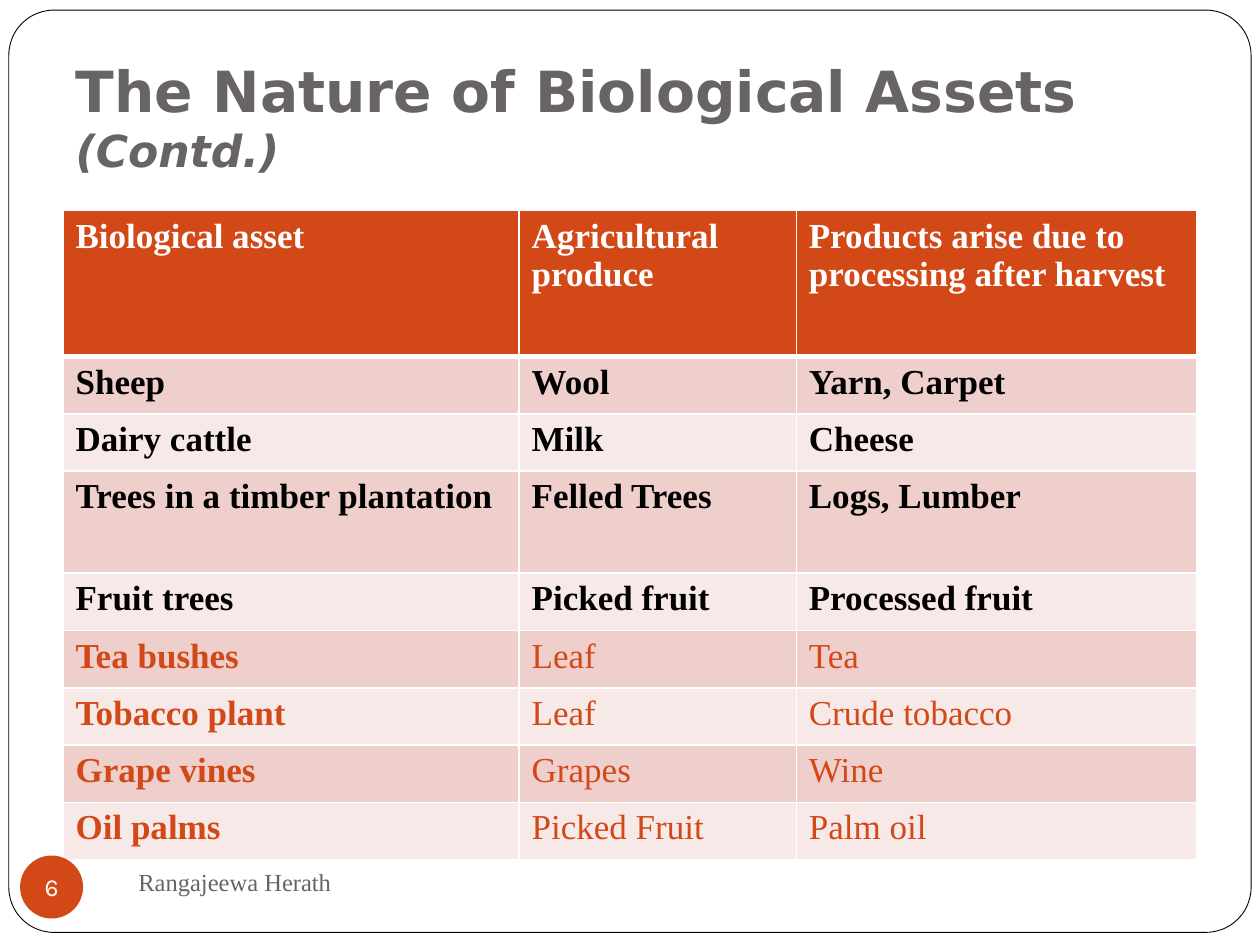
from lxml import etree
from pptx import Presentation
from pptx.dml.color import RGBColor
from pptx.enum import shapes, text
from pptx.oxml import ns
from pptx.util import Inches, Pt

COLORS = {
    "white": "FFFFFF", "black": "000000", "accent": "D34817",
    "gray": "696464", "band_dark": "EFCFCC", "band_light": "F7E9E8",
}
SERIF = "Times New Roman"

ASSETS = [
    ("Biological asset", "Agricultural produce",
     "Products arise due to processing after harvest"),
    ("Sheep", "Wool", "Yarn, Carpet"),
    ("Dairy cattle", "Milk", "Cheese"),
    ("Trees in a timber plantation", "Felled Trees", "Logs, Lumber"),
    ("Fruit trees", "Picked fruit", "Processed fruit"),
    ("Tea bushes", "Leaf", "Tea"),
    ("Tobacco plant", "Leaf", "Crude tobacco"),
    ("Grape vines", "Grapes", "Wine"),
    ("Oil palms", "Picked Fruit", "Palm oil"),
]
FIRST_ACCENT_ROW = 5
COLUMN_WIDTHS = (3.62, 2.2, 3.18)
ROW_HEIGHT = 0.455
TALL_ROWS = {0: 1.16, 3: 0.81}


def color(name):
    return RGBColor.from_string(COLORS[name])


def style(run, size, font, color_name, bold=False, italic=False):
    run.font.size = Pt(size)
    run.font.name = font
    run.font.color.rgb = color(color_name)
    run.font.bold = bold
    run.font.italic = italic


def set_margins(frame, left, top, right, bottom):
    frame.margin_left, frame.margin_top = Inches(left), Inches(top)
    frame.margin_right, frame.margin_bottom = Inches(right), Inches(bottom)


def add_frame(slide):
    frame = slide.shapes.add_shape(
        shapes.MSO_SHAPE.ROUNDED_RECTANGLE,
        Inches(0.07), Inches(0.08), Inches(9.86), Inches(7.32))
    frame.adjustments[0] = 0.049
    frame.shadow.inherit = False
    frame.fill.solid()
    frame.fill.fore_color.rgb = color("white")
    frame.line.color.rgb = color("black")
    frame.line.width = Pt(0.5)
    # Send behind the title placeholder
    slide.shapes.element.insert(2, frame.element)


def fill_title(slide):
    title = slide.shapes.title
    title.left, title.top = Inches(0.5), Inches(0.42)
    title.width, title.height = Inches(8.92), Inches(1.08)
    frame = title.text_frame
    frame.word_wrap = True
    frame.auto_size = text.MSO_AUTO_SIZE.NONE
    frame.vertical_anchor = text.MSO_ANCHOR.BOTTOM
    set_margins(frame, 0.1, 0.05, 0.1, 0.1)
    heading = frame.paragraphs[0]
    heading.alignment = text.PP_ALIGN.LEFT
    for words, size, italic in (("The Nature of Biological Assets ", 32.4, False),
                                ("(Contd.)", 25.2, True)):
        run = heading.add_run()
        run.text = words
        style(run, size, "DejaVu Sans", "gray", bold=True, italic=italic)


def set_borders(cell, top=1, bottom=1):
    properties = cell._tc.get_or_add_tcPr()
    widths = {"lnL": 1, "lnR": 1, "lnT": top, "lnB": bottom}
    for position, (side, width) in enumerate(widths.items()):
        line = etree.Element(ns.qn(f"a:{side}"), w=str(Pt(width)))
        fill = etree.SubElement(line, ns.qn("a:solidFill"))
        etree.SubElement(fill, ns.qn("a:srgbClr"), val=COLORS["white"])
        properties.insert(position, line)


def fill_cell(cell, words, row, column):
    header = row == 0
    accented = row >= FIRST_ACCENT_ROW
    if header:
        background, ink = "accent", "white"
    else:
        background = "band_dark" if row % 2 else "band_light"
        ink = "accent" if accented else "black"
    cell.text_frame.text = words
    style(cell.text_frame.paragraphs[0].runs[0], 20, SERIF, ink,
          bold=column == 0 or not accented)
    cell.fill.solid()
    cell.fill.fore_color.rgb = color(background)
    set_borders(cell, top=3 if row == 1 else 1, bottom=3 if header else 1)


def add_asset_table(slide):
    table = slide.shapes.add_table(
        len(ASSETS), len(COLUMN_WIDTHS),
        Inches(0.5), Inches(1.67), Inches(9), Inches(5.15)).table
    for column, width in zip(table.columns, COLUMN_WIDTHS):
        column.width = Inches(width)
    for r, entries in enumerate(ASSETS):
        table.rows[r].height = Inches(TALL_ROWS.get(r, ROW_HEIGHT))
        for c, words in enumerate(entries):
            fill_cell(table.cell(r, c), words, r, c)


def add_page_badge(slide):
    badge = slide.shapes.add_shape(
        shapes.MSO_SHAPE.OVAL,
        Inches(0.16), Inches(6.79), Inches(0.5), Inches(0.5))
    badge.shadow.inherit = False
    badge.fill.solid()
    badge.fill.fore_color.rgb = color("accent")
    badge.line.fill.background()
    frame = badge.text_frame
    frame.text = "6"
    frame.word_wrap = False
    frame.vertical_anchor = text.MSO_ANCHOR.MIDDLE
    set_margins(frame, 0, 0, 0, 0)
    frame.paragraphs[0].alignment = text.PP_ALIGN.CENTER
    style(frame.paragraphs[0].runs[0], 14, "Karla", "white")


def add_author(slide):
    author = slide.shapes.add_textbox(
        Inches(1), Inches(6.75), Inches(4.33), Inches(0.5))
    frame = author.text_frame
    frame.text = "Rangajeewa Herath"
    frame.word_wrap = True
    frame.vertical_anchor = text.MSO_ANCHOR.MIDDLE
    style(frame.paragraphs[0].runs[0], 14, SERIF, "gray")


def main():
    deck = Presentation()
    deck.slide_width, deck.slide_height = Inches(10), Inches(7.5)
    slide = deck.slides.add_slide(deck.slide_layouts.get_by_name("Title Only"))

    # Background frame and heading
    add_frame(slide)
    fill_title(slide)

    # Content
    add_asset_table(slide)

    # Footer
    add_page_badge(slide)
    add_author(slide)

    deck.save("out.pptx")


if __name__ == "__main__":
    main()
